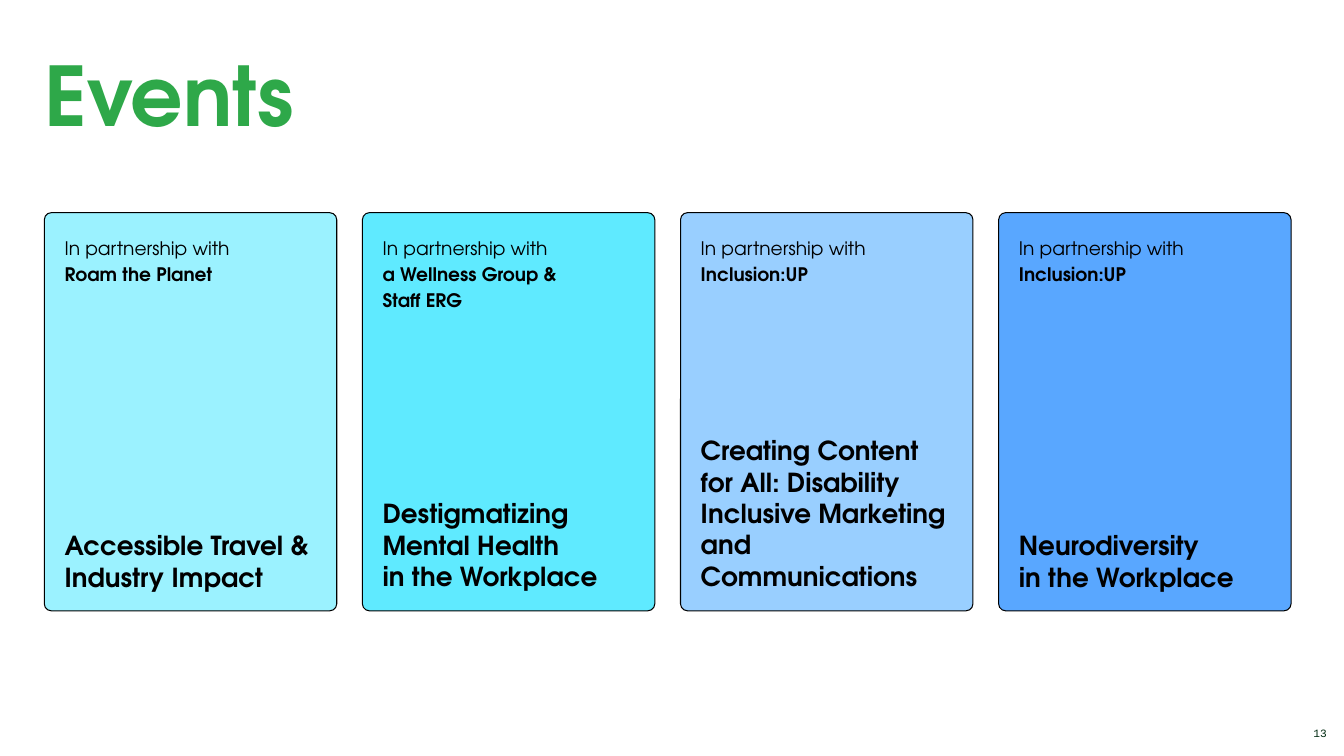
from copy import deepcopy
from pptx import Presentation
from pptx import util as u
from pptx.dml.color import RGBColor
from pptx.enum import shapes, text

FONT = "TeX Gyre Adventor"
LEAD = "In partnership with"
CARDS = [
    ("9BF2FF", "Roam the Planet", "Accessible Travel & Industry Impact", 2),
    ("5FEAFF", "a Wellness Group &\vStaff ERG", "Destigmatizing Mental Health\vin the Workplace", 3),
    ("99CFFF", "Inclusion:UP", "Creating Content for All: Disability Inclusive Marketing and Communications", 5),
    ("59A7FF", "Inclusion:UP", "Neurodiversity\vin the Workplace", 2),
]
LEFT, TOP, WIDE, HIGH, STEP = 0.44, 2.11, 2.9, 3.95, 3.155
PAD, LINE, ROW = 0.2, 0.26, 0.314


def tint(code):
    return RGBColor.from_string(code)


def box(*sides):
    return [u.Inches(side) for side in sides]


def fill(frame, words, size, color="000000", font=FONT, bold=True, gap=1.0):
    frame.margin_left = frame.margin_right = frame.margin_top = frame.margin_bottom = 0
    frame.word_wrap = True
    frame.vertical_anchor = text.MSO_ANCHOR.TOP
    par = frame.paragraphs[0]
    par.text = words
    par.line_spacing = gap
    for run in par.runs:
        run.font.name, run.font.size, run.font.bold = font, u.Pt(size), bold
        run.font.color.rgb = tint(color)
    for node in par._p.findall("{*}br"):
        node.append(deepcopy(par.runs[0]._r.rPr))
    return par


def label(slide, area, *args, **style):
    return fill(slide.shapes.add_textbox(*box(*area)).text_frame, *args, **style)


def card(slide, left, color, partner, topic, rows):
    form = slide.shapes.add_shape(shapes.MSO_SHAPE.ROUNDED_RECTANGLE, *box(left, TOP, WIDE, HIGH))
    form.shadow.inherit = False
    form.adjustments[0] = 0.024
    form.fill.solid()
    form.fill.fore_color.rgb = tint(color)
    form.line.color.rgb = tint("000000")
    form.line.width = u.Pt(0.75)

    inner, span = left + PAD, WIDE - 2 * PAD + 0.01
    high = rows * ROW
    label(slide, (inner, TOP + HIGH - 0.18 - high, span, high), topic, 18.7)
    lines = 2 + partner.count("\v")
    par = label(slide, (inner, TOP + 0.21, span, lines * LINE), f"{LEAD}\v{partner}", 13.3, gap=1.15)
    par.runs[0].font.bold = False


def main():
    deck = Presentation()
    deck.slide_width, deck.slide_height = box(13.33, 7.5)
    slide = deck.slides.add_slide(deck.slide_layouts[5])
    title = slide.shapes.title
    title.left, title.top, title.width, title.height = box(LEFT, 0.44, 5.89, 0.89)
    fill(title.text_frame, "Events", 58.7, "2EA849").alignment = text.PP_ALIGN.LEFT
    for col, item in enumerate(CARDS):
        card(slide, LEFT + col * STEP, *item)
    page = label(slide, (12.49, 7.21, 0.67, 0.37), "13", 8, "002B11", "Courier New", False)
    page.alignment = text.PP_ALIGN.RIGHT
    deck.save("out.pptx")


if __name__ == "__main__":
    main()
